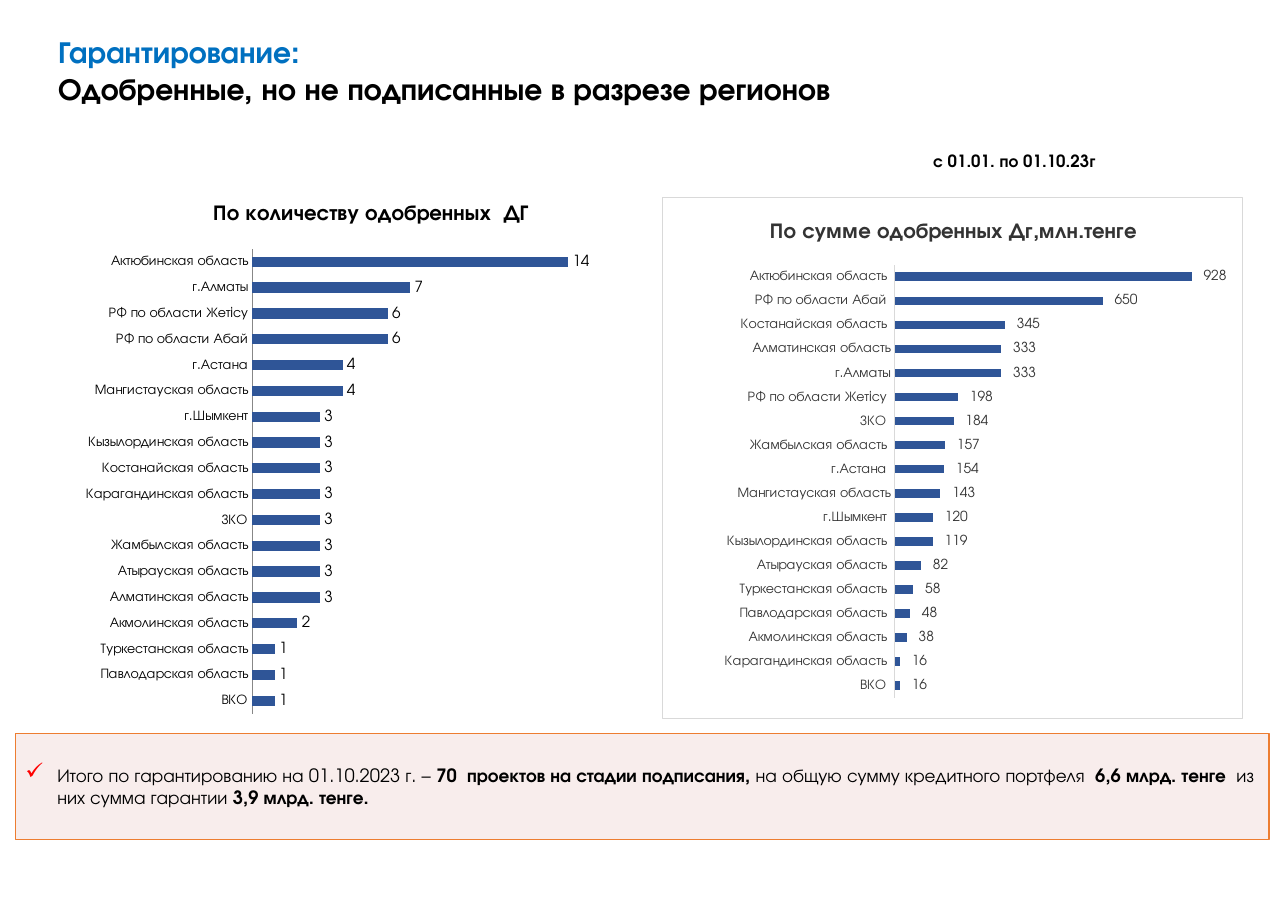
import dataclasses

import lxml.etree
import pptx
import pptx.chart.data
import pptx.dml.color
import pptx.enum.chart
import pptx.enum.shapes
import pptx.enum.text
import pptx.oxml
import pptx.oxml.ns
import pptx.util

Inches = pptx.util.Inches
Pt = pptx.util.Pt
qn = pptx.oxml.ns.qn


@dataclasses.dataclass(frozen=True)
class Theme:
    font: str = "TeX Gyre Adventor"
    black: str = "000000"
    dark_grey: str = "333333"
    light_grey: str = "D9D9D9"
    axis_grey: str = "878787"
    white: str = "FFFFFF"
    blue: str = "0070C0"
    bar: str = "2F5597"
    pink: str = "F2DCDB"
    orange: str = "ED7D31"
    red: str = "FF0000"
    heading_size: int = 20
    chart_title_size: int = 14
    note_size: int = 12
    period_size: int = 11
    count_size: int = 10
    label_size: int = 9


@dataclasses.dataclass(frozen=True)
class BarStyle:
    """Per-chart look; title_at and plot are inches within the chart frame."""
    title_at: tuple
    plot: tuple
    maximum: int
    gap: int
    label_size: int
    color: str
    axis_color: str
    number_format: str = "General"
    framed: bool = False


def rgb(color):
    return pptx.dml.color.RGBColor.from_string(color)


def add_layout(parent, frame, values, inner=False):
    """Fix a chart title or plot area at a place given in inches."""
    for old in parent.findall(qn("c:layout")):
        parent.remove(old)
    layout = lxml.etree.Element(qn("c:layout"))
    manual = lxml.etree.SubElement(layout, qn("c:manualLayout"))
    settings = [("layoutTarget", "inner")] if inner else []
    settings += [("xMode", "edge"), ("yMode", "edge")]
    settings += [(name, f"{value / frame[2 + index % 2]:.4f}")
                 for index, (name, value) in enumerate(zip("xywh", values))]
    for name, value in settings:
        lxml.etree.SubElement(manual, qn(f"c:{name}")).set("val", value)
    text = parent.find(qn("c:tx"))
    if text is None:
        parent.insert(0, layout)
    else:
        text.addnext(layout)


class SlideBuilder:
    def __init__(self, slide, theme):
        self.slide = slide
        self.theme = theme

    def style_font(self, font, size, color, bold=False):
        font.name = self.theme.font
        font.size = Pt(size)
        font.bold = bold
        font.color.rgb = rgb(color)

    def text(self, frame, lines, size, wrap=True):
        """Add a bold text box; lines are (text, colour) pairs."""
        box = self.slide.shapes.add_textbox(*map(Inches, frame))
        box.text_frame.word_wrap = wrap
        for index, (line, color) in enumerate(lines):
            para = box.text_frame.paragraphs[0] if index == 0 else box.text_frame.add_paragraph()
            para.text = line
            self.style_font(para.font, size, color, bold=True)

    def callout(self, frame, spans):
        """Add the tinted summary box; spans are (text, bold) pairs."""
        theme = self.theme
        box = self.slide.shapes.add_shape(
            pptx.enum.shapes.MSO_SHAPE.RECTANGLE, *map(Inches, frame))
        box.shadow.inherit = False
        box.fill.solid()
        box.fill.fore_color.rgb = rgb(theme.pink)
        tint = box.fill._xPr.find(".//" + qn("a:srgbClr"))
        lxml.etree.SubElement(tint, qn("a:alpha")).set("val", "50000")
        box.line.color.rgb = rgb(theme.orange)
        box.line.width = Pt(1)
        body = box.text_frame
        body.word_wrap = True
        body.vertical_anchor = pptx.enum.text.MSO_ANCHOR.MIDDLE
        body.margin_left = body.margin_right = Inches(0.08)
        body.margin_top = body.margin_bottom = Inches(0.04)
        para = body.paragraphs[0]
        para.alignment = pptx.enum.text.PP_ALIGN.LEFT
        para.space_after = Pt(6)
        props = para._p.get_or_add_pPr()
        props.set("marL", str(Inches(0.3)))
        props.set("indent", str(Inches(-0.29)))
        bullet_color = lxml.etree.SubElement(props, qn("a:buClr"))
        lxml.etree.SubElement(bullet_color, qn("a:srgbClr")).set("val", theme.red)
        lxml.etree.SubElement(props, qn("a:buSzPct")).set("val", "125000")
        lxml.etree.SubElement(props, qn("a:buChar")).set("char", "✓")
        self.style_font(para.font, theme.note_size, theme.black)
        for text, bold in spans:
            span = para.add_run()
            span.text = text
            span.font.bold = bold

    def bar_chart(self, frame, title, rows, style):
        theme = self.theme
        data = pptx.chart.data.CategoryChartData()
        data.categories = [name for name, value in rows]
        data.add_series("Series 1", [value for name, value in rows])
        chart = self.slide.shapes.add_chart(
            pptx.enum.chart.XL_CHART_TYPE.BAR_CLUSTERED, *map(Inches, frame), data).chart
        self.style_font(chart.font, theme.label_size, style.color)
        chart.has_legend = False
        chart.has_title = True
        para = chart.chart_title.text_frame.paragraphs[0]
        para.text = title
        self.style_font(para.font, theme.chart_title_size, style.color, bold=True)
        add_layout(chart.chart_title._element, frame, style.title_at)
        add_layout(chart._chartSpace.chart.plotArea, frame, style.plot, inner=True)

        plot = chart.plots[0]
        plot.gap_width = style.gap
        plot.vary_by_categories = False
        fill = plot.series[0].format.fill
        fill.solid()
        fill.fore_color.rgb = rgb(theme.bar)
        plot.has_data_labels = True
        labels = plot.data_labels
        labels.show_value = True
        labels.position = pptx.enum.chart.XL_LABEL_POSITION.OUTSIDE_END
        labels.number_format = style.number_format
        labels.number_format_is_linked = False
        self.style_font(labels.font, style.label_size, style.color)

        axis = chart.category_axis
        axis.major_tick_mark = pptx.enum.chart.XL_TICK_MARK.NONE
        axis.format.line.color.rgb = rgb(style.axis_color)
        axis.format.line.width = Pt(0.75)
        self.style_font(axis.tick_labels.font, theme.label_size, style.color)
        chart.value_axis.visible = False
        chart.value_axis.has_major_gridlines = False
        chart.value_axis.minimum_scale = 0
        chart.value_axis.maximum_scale = style.maximum
        if style.framed:
            chart._chartSpace.chart.addnext(pptx.oxml.parse_xml(
                f'<c:spPr xmlns:c="{pptx.oxml.ns.namespaces("c")["c"]}"'
                f' xmlns:a="{pptx.oxml.ns.namespaces("a")["a"]}">'
                f'<a:solidFill><a:srgbClr val="{theme.white}"/></a:solidFill>'
                f'<a:ln w="{Pt(0.75)}"><a:solidFill><a:srgbClr val="{theme.light_grey}"/>'
                '</a:solidFill></a:ln></c:spPr>'))


COUNTS = [
    ("ВКО", 1), ("Павлодарская область", 1), ("Туркестанская область", 1),
    ("Акмолинская область", 2), ("Алматинская область", 3), ("Атырауская область", 3),
    ("Жамбылская область", 3), ("ЗКО", 3), ("Карагандинская область", 3),
    ("Костанайская область", 3), ("Кызылординская область", 3), ("г.Шымкент", 3),
    ("Мангистауская область", 4), ("г.Астана", 4), ("РФ по области Абай", 6),
    ("РФ по области Жетiсу", 6), ("г.Алматы", 7), ("Актюбинская область", 14)]
SUMS = [
    (" ВКО ", 16), (" Карагандинская область ", 16), (" Акмолинская область ", 38),
    (" Павлодарская область ", 48), (" Туркестанская область ", 58),
    (" Атырауская область ", 82), (" Кызылординская область ", 119), (" г.Шымкент ", 120),
    ("Мангистауская область", 143), (" г.Астана ", 154), (" Жамбылская область ", 157),
    (" ЗКО ", 184), (" РФ по области Жетiсу ", 198), ("г.Алматы", 333),
    ("Алматинская область", 333), (" Костанайская область ", 345),
    (" РФ по области Абай ", 650), (" Актюбинская область ", 928)]


def main():
    deck = pptx.Presentation()
    deck.slide_width, deck.slide_height = Inches(11.69), Inches(8.27)
    theme = Theme()
    page = SlideBuilder(deck.slides.add_slide(deck.slide_layouts[6]), theme)
    page.text((8.37, 1.32, 1.72, 0.29), [("с 01.01. по 01.10.23г", theme.black)],
              theme.period_size, wrap=False)
    page.text((0.43, 0.25, 8.1, 1.11),
              [("Гарантирование:", theme.blue),
               ("Одобренные, но не подписанные в разрезе регионов", theme.black)],
              theme.heading_size)
    page.callout((0.14, 6.66, 11.38, 0.96), [
        ("Итого по гарантированию на 01.10.2023 г. – ", False),
        ("70  проектов на стадии подписания, ", True),
        ("на общую сумму кредитного портфеля  ", False),
        ("6,6 млрд. тенге  ", True),
        ("из них сумма гарантии", False),
        (" 3,9 млрд. тенге.", True)])
    page.bar_chart((0.37, 1.66, 5.46, 5.05), "По количеству одобренных  ДГ", COUNTS, BarStyle(
        title_at=(1.53, 0.14), plot=(1.92, 0.6, 3.28, 4.22), maximum=16, gap=150,
        label_size=theme.count_size, color=theme.black, axis_color=theme.axis_grey))
    page.bar_chart((6.01, 1.79, 5.27, 4.74), "По сумме одобренных Дг,млн.тенге", SUMS, BarStyle(
        title_at=(0.94, 0.17), plot=(2.11, 0.61, 2.91, 3.94), maximum=1000, gap=182,
        label_size=theme.label_size, color=theme.dark_grey, axis_color=theme.light_grey,
        number_format=r"_-* #\ ##0_р_._-", framed=True))
    deck.save("out.pptx")


if __name__ == "__main__":
    main()
